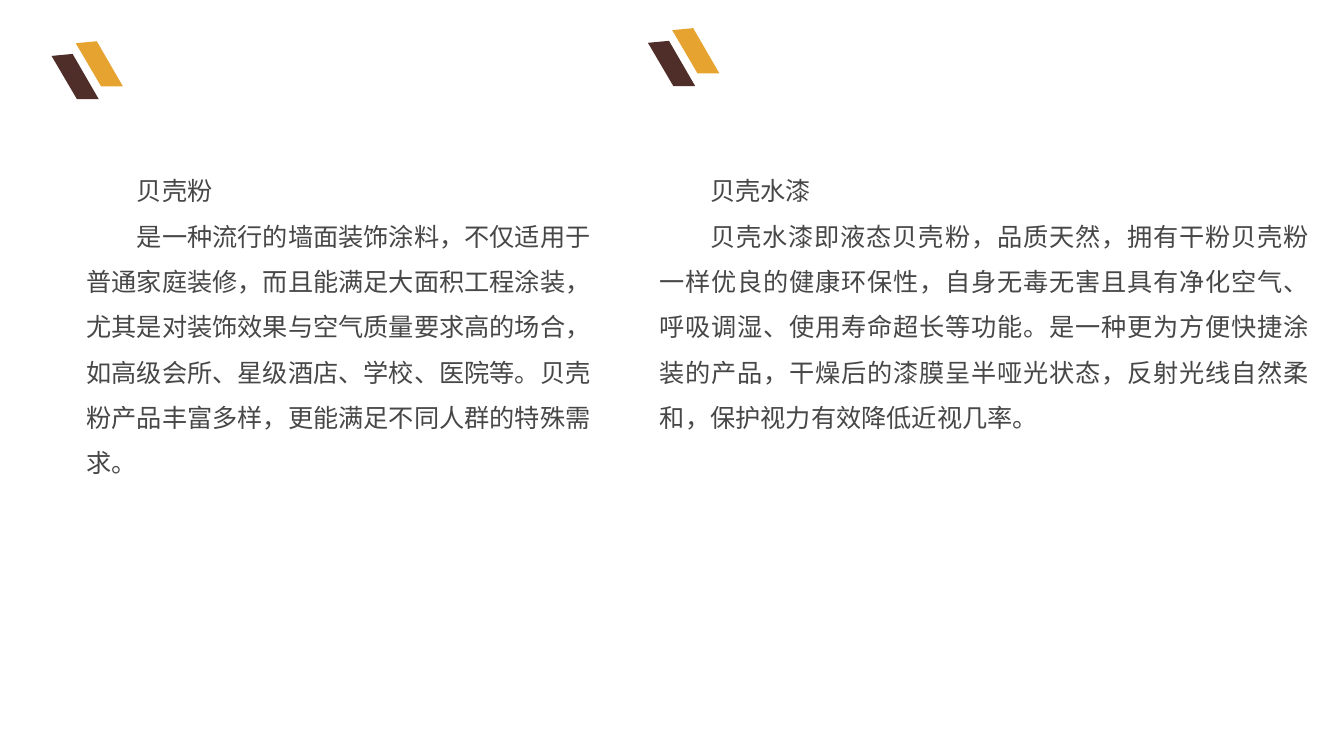
"""Build a slide comparing shell powder with shell water paint."""
from dataclasses import dataclass

from lxml.etree import SubElement
from pptx import Presentation
from pptx.dml.color import RGBColor
from pptx.enum.text import MSO_ANCHOR, MSO_AUTO_SIZE, PP_ALIGN
from pptx.oxml.ns import qn
from pptx.shapes.placeholder import SlidePlaceholder
from pptx.slide import Slide
from pptx.text.text import _Paragraph
from pptx.util import Cm, Pt

COLORS = {"brown": "4F2D28", "gold": "E6A330", "text": "474747"}
STRIPE_OUTLINE = [(0, 0.05), (0.53, 0), (1.19, 1.14), (0.64, 1.14)]
STRIPE_OFFSETS = {"brown": (0, 0), "gold": (0.61, -0.32)}
FRAME_FORMAT = {
    "word_wrap": True,
    "auto_size": MSO_AUTO_SIZE.NONE,
    "vertical_anchor": MSO_ANCHOR.TOP,
    "margin_left": Cm(0.3),
    "margin_right": Cm(0.3),
    "margin_top": Cm(0.13),
    "margin_bottom": Cm(0.13),
}
FONT_FORMAT = {"name": "Arial", "size": Pt(18)}


@dataclass(frozen=True)
class Product:
    """A product column with its stripe mark; lengths in centimetres."""

    name: str
    description: str
    mark: tuple[float, float]
    left: float
    width: float
    height: float
    alignment: PP_ALIGN


PRODUCTS = [
    Product(
        "贝壳粉",
        "是一种流行的墙面装饰涂料，不仅适用于普通家庭装修，而且能满足大面积工程涂装，"
        "尤其是对装饰效果与空气质量要求高的场合，如高级会所、星级酒店、学校、医院等。"
        "贝壳粉产品丰富多样，更能满足不同人群的特殊需求。",
        (1.3, 1.36), 1.88, 13.92, 12.29, PP_ALIGN.LEFT,
    ),
    Product(
        "贝壳水漆",
        "贝壳水漆即液态贝壳粉，品质天然，拥有干粉贝壳粉一样优良的健康环保性，"
        "自身无毒无害且具有净化空气、呼吸调湿、使用寿命超长等功能。"
        "是一种更为方便快捷涂装的产品，干燥后的漆膜呈半哑光状态，"
        "反射光线自然柔和，保护视力有效降低近视几率。",
        (16.33, 1.03), 16.33, 16.97, 15.14, PP_ALIGN.JUSTIFY,
    ),
]


def apply_format(target: object, values: dict) -> None:
    """Set every attribute in values on the target."""
    for name, value in values.items():
        setattr(target, name, value)


def draw_mark(slide: Slide, product: Product) -> None:
    """Draw the two slanted stripes above a product."""
    for color, offset in STRIPE_OFFSETS.items():
        left, top = (start + shift for start, shift in zip(product.mark, offset))
        points = [(Cm(left + x), Cm(top + y)) for x, y in STRIPE_OUTLINE]
        builder = slide.shapes.build_freeform(*points[0])
        builder.add_line_segments(points[1:], close=True)
        stripe = builder.convert_to_shape()
        stripe.shadow.inherit = False
        stripe.fill.solid()
        stripe.fill.fore_color.rgb = RGBColor.from_string(COLORS[color])
        stripe.line.fill.background()


def format_paragraph(paragraph: _Paragraph, alignment: PP_ALIGN) -> None:
    """Give a paragraph a two-character first-line indent and the slide's font."""
    properties = paragraph._p.get_or_add_pPr()
    properties.set("marL", "0")
    properties.set("indent", str(Pt(36)))
    SubElement(properties, qn("a:buNone"))
    apply_format(paragraph, {
        "alignment": alignment, "line_spacing": 1.5,
        "space_before": Pt(0), "space_after": Pt(0),
    })
    apply_format(paragraph.font, FONT_FORMAT)
    paragraph.font.color.rgb = RGBColor.from_string(COLORS["text"])


def fill_body(body: SlidePlaceholder, product: Product) -> None:
    """Place a body placeholder and write the product's text in it."""
    apply_format(body, {
        "left": Cm(product.left), "top": Cm(3.91),
        "width": Cm(product.width), "height": Cm(product.height),
    })
    frame = body.text_frame
    apply_format(frame, FRAME_FORMAT)
    frame.text = f"{product.name}\n{product.description}"
    for paragraph in frame.paragraphs:
        format_paragraph(paragraph, product.alignment)


def main() -> None:
    """Build and save the presentation."""
    presentation = Presentation()
    presentation.slide_width = Cm(33.87)
    presentation.slide_height = Cm(19.05)
    slide = presentation.slides.add_slide(presentation.slide_layouts.get_by_name("Two Content"))
    title, *bodies = slide.placeholders
    title.element.getparent().remove(title.element)
    for body, product in zip(bodies, PRODUCTS):
        draw_mark(slide, product)
        fill_body(body, product)
    presentation.save("out.pptx")


if __name__ == "__main__":
    main()
